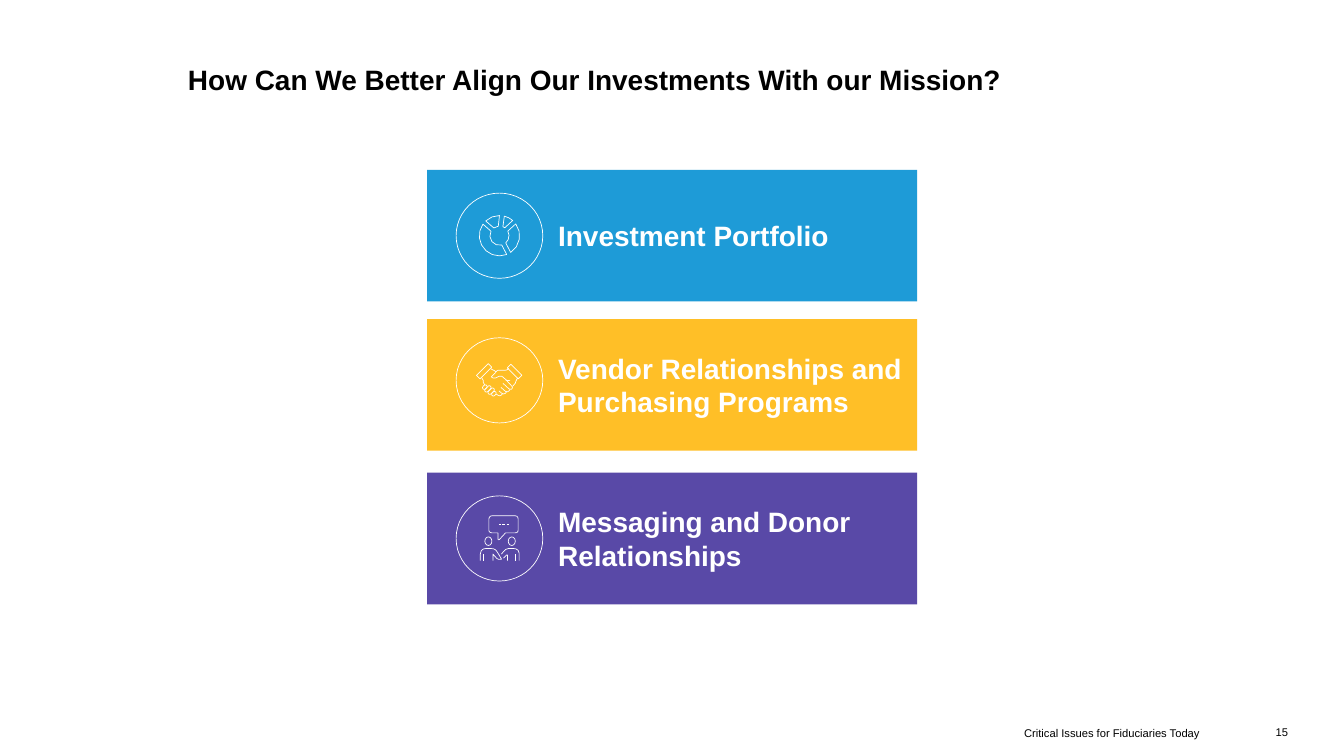
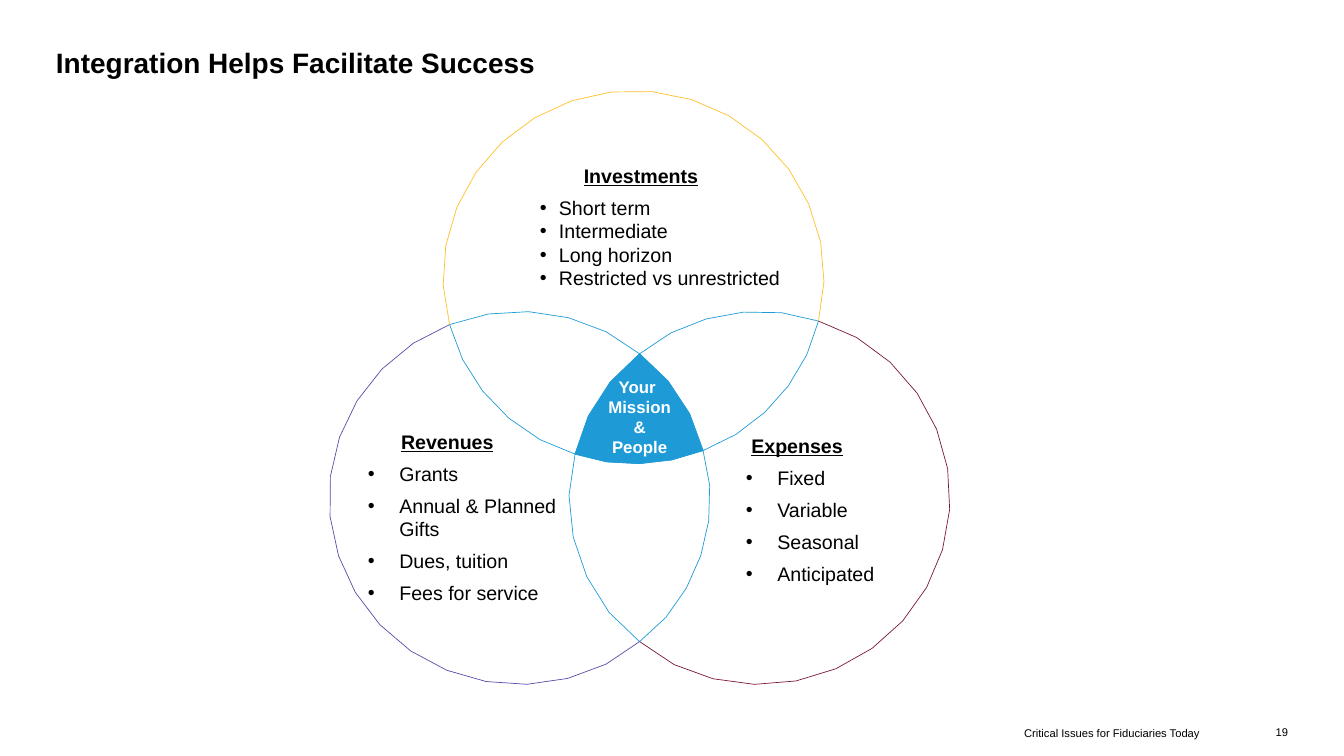
from math import atan2, ceil, cos, pi, radians, sin

from lxml import etree
from pptx import Presentation
from pptx.dml.color import RGBColor
from pptx.enum.shapes import MSO_CONNECTOR, MSO_SHAPE
from pptx.enum.text import MSO_ANCHOR, PP_ALIGN
from pptx.oxml.ns import qn
from pptx.util import Inches, Pt

RECT, OVAL, PILL = MSO_SHAPE.RECTANGLE, MSO_SHAPE.OVAL, MSO_SHAPE.ROUNDED_RECTANGLE
STRAIGHT = MSO_CONNECTOR.STRAIGHT
LEFT, CENTER, RIGHT = PP_ALIGN.LEFT, PP_ALIGN.CENTER, PP_ALIGN.RIGHT
TOP, MIDDLE = MSO_ANCHOR.TOP, MSO_ANCHOR.MIDDLE

FONT = "Arial"
BLACK, WHITE, BLUE, GOLD, PURPLE, WINE = (
    "000000", "FFFFFF", "1E9BD7", "FFBF27", "5949A7", "7A1736")
COLUMNS, ROWS = 80, 45
ICON_UNIT = 0.03  # icon drawings count in these parts of a grid cell
FOOTER = "Critical Issues for Fiduciaries Today"


def rgb(value):
    return RGBColor.from_string(value)


def curve_points(steps, count=3):
    """Turn line steps (x, y) and Bezier steps (six numbers) into points."""
    points = []
    for step in steps:
        if len(step) == 2:
            points.append(step)
            continue
        corners = [points[-1], step[:2], step[2:4], step[4:]]
        for i in range(1, count + 1):
            t = i / count
            weights = ((1 - t) ** 3, 3 * t * (1 - t) ** 2, 3 * t * t * (1 - t), t ** 3)
            points.append(tuple(sum(w * c[axis] for w, c in zip(weights, corners))
                                for axis in (0, 1)))
    return points


def spread(first, last, widest):
    """Equal steps from first to last, none wider than the given one."""
    count = max(1, ceil(abs(last - first) / widest))
    return [first + (last - first) * i / count for i in range(count + 1)]


def polar(radius, degrees):
    """Point at a clockwise angle from twelve o'clock."""
    return radius * sin(radians(degrees)), -radius * cos(radians(degrees))


class Deck:
    """Presentation style, grid and current slide."""

    def __init__(self):
        self.deck = Presentation()
        self.deck.slide_width, self.deck.slide_height = Inches(26.66), Inches(15)
        self.slide = self.shapes = None

    def x(self, columns):
        return round(self.deck.slide_width * columns / COLUMNS)

    def y(self, rows):
        return round(self.deck.slide_height * rows / ROWS)

    def box(self, left, top, width, height):
        return self.x(left), self.y(top), self.x(width), self.y(height)

    def new_slide(self, title, title_box, number):
        self.slide = self.deck.slides.add_slide(self.deck.slide_layouts[5])
        self.shapes = self.slide.shapes
        heading = self.shapes.title
        heading.left, heading.top, heading.width, heading.height = self.box(*title_box)
        self.frame(heading, TOP)
        self.paragraph(heading, title, size=40, bold=True)
        self.text((53.05, 43.2, 18.36, 0.9), [FOOTER], MIDDLE, size=16, align=RIGHT)
        self.text((74.3, 43.14, 2.37, 0.9), [number], MIDDLE, size=16, align=RIGHT)

    def frame(self, shape, anchor, insets=(0, 0, 0, 0)):
        frame = shape.text_frame
        frame.word_wrap, frame.vertical_anchor = True, anchor
        (frame.margin_left, frame.margin_top,
         frame.margin_right, frame.margin_bottom) = self.box(*insets)

    def paragraph(self, shape, text, size, color=BLACK, align=LEFT, before=0,
                  indent=0, bullet=False, **font):
        frame = shape.text_frame
        paragraph = frame.add_paragraph() if frame.text else frame.paragraphs[0]
        properties = paragraph._p.get_or_add_pPr()
        if indent:
            properties.set("marL", str(self.x(indent)))
            properties.set("indent", str(-self.x(indent) if bullet else 0))
        if bullet:
            etree.SubElement(properties, qn("a:buFont")).set("typeface", FONT)
            etree.SubElement(properties, qn("a:buChar")).set("char", "•")
        paragraph.alignment, paragraph.space_before = align, Pt(before)
        run = paragraph.add_run()
        run.text = text
        for name, value in {"name": FONT, "size": Pt(size), **font}.items():
            setattr(run.font, name, value)
        run.font.color.rgb = rgb(color)

    def text(self, box, lines, anchor=TOP, **style):
        shape = self.shapes.add_textbox(*self.box(*box))
        self.frame(shape, anchor)
        for line in lines:
            self.paragraph(shape, line, **style)
        return shape

    def paint(self, shape, fill=None, line=None):
        shape.shadow.inherit = False
        if fill:
            shape.fill.solid()
            shape.fill.fore_color.rgb = rgb(fill)
        else:
            shape.fill.background()
        if line:
            shape.line.color.rgb, shape.line.width = rgb(line), Pt(1)
        else:
            shape.line.fill.background()
        return shape

    def preset(self, kind, box, fill=None, line=None, rotation=0):
        shape = self.paint(self.shapes.add_shape(kind, *self.box(*box)), fill, line)
        shape.rotation = rotation
        if kind == PILL:
            shape.adjustments[0] = 0.5
        return shape

    def outline(self, points, line, fill=None, close=False):
        places = [(self.x(x), self.y(y)) for x, y in points]
        builder = self.shapes.build_freeform(*places[0])
        builder.add_line_segments(places[1:], close=close)
        return self.paint(builder.convert_to_shape(), fill, line)

    def straight(self, start, end, line):
        connector = self.shapes.add_connector(
            STRAIGHT, self.x(start[0]), self.y(start[1]), self.x(end[0]), self.y(end[1]))
        connector.line.color.rgb, connector.line.width = rgb(line), Pt(1)
        etree.SubElement(connector._element.spPr, qn("a:effectLst"))

    def icon(self, center, drawing):
        """Ringed line icon; the drawing is given around its centre."""
        def place(point):
            return tuple(c + p * ICON_UNIT for c, p in zip(center, point))

        self.shapes = self.slide.shapes.add_group_shape().shapes
        ring = (OVAL, 0, 0, 172, 169, 0)
        for kind, x, y, width, height, rotation in [ring] + drawing.get("presets", []):
            left, top = place((x - width / 2, y - height / 2))
            self.preset(kind, (left, top, width * ICON_UNIT, height * ICON_UNIT),
                        line=WHITE, rotation=rotation)
        for key, close in (("open", False), ("closed", True)):
            for steps in drawing.get(key, []):
                self.outline([place(p) for p in curve_points(steps)], WHITE, close=close)
        for x1, y1, x2, y2 in drawing.get("lines", []):
            self.straight(place((x1, y1)), place((x2, y2)), WHITE)
        self.shapes = self.slide.shapes

    def bullet_list(self, box, heading, heading_indent, items, indent, gaps):
        listing = self.text(box, [heading], size=28, bold=True, underline=True,
                            indent=heading_indent)
        for item, gap in zip(items, gaps):
            self.paragraph(listing, item, 28, before=gap, indent=indent, bullet=True)


def ring_segment(start, end, outer=40, inner=19, inset=7):
    return ([polar(outer, a) for a in spread(start, end, 24)]
            + [polar(inner, a) for a in spread(end - inset, start + inset, 36)])


PORTFOLIO = {"closed": [ring_segment(*span) for span in
                        ((14, 41), (54, 146), (159, 305), (317, 360))]}
HANDSHAKE = {
    "presets": [(RECT, -30.5, -18, 33, 10, 315), (RECT, 30, -17.5, 10, 31, 315)]
    + [(PILL, x, y, length, 7, 315) for x, y, length in
       ((-29, 13.5, 10), (-23, 17, 15), (-16.5, 21.5, 15), (-11, 26.5, 10))],
    "open": [
        [(12, -2), (5, -8), (-1, -8), (-3, -7, -5, -6, -7, -5),
         (-10, -4, -14, -4, -16, -7), (-10, -13), (-5, -19),
         (-4, -20, -3, -20, -1, -20), (9, -20), (11, -20, 15, -20, 17, -22), (18, -24)],
        [(26, 12), (35, 4, 31, 2, 35, -3), (37, -5)],
        [(12, -2), (25, 12), (28, 14, 24, 21, 19, 17), (7, 6)],
        [(21, 18), (20, 20, 17, 25, 12, 22), (3, 14)],
        [(14, 23), (12, 27, 8, 28, 5, 26), (-1, 21)],
        [(6, 27), (4, 30, 1, 32, -2, 30), (-7, 27)],
        [(-17, -23), (-12, -19, -11, -21, -7, -17)],
        [(-29, 9), (-35, 4, -29, 1, -35, -5)],
        [(21, 0), (16, 1, 15, 0, 12, -1)]]}
DIALOGUE = {
    "presets": [(OVAL, x, 5.5, 14, 17, 0) for x in (24.5, -22)],
    "open": [
        [(4, 31), (8, 26, 12, 20, 18, 20), (28, 20), (32, 20, 39, 22, 39, 29), (39, 44)],
        [(16, 44), (16, 33), (14, 33), (8, 39)],
        [(-13, 44), (-13, 31), (-5, 40), (-2, 43, 4, 41, 4, 41),
         (4, 41, -1, 32, -5, 26), (-7, 22, -11, 20, -17, 20), (-27, 20),
         (-31, 20, -38, 22, -38, 31), (-38, 44)]],
    "closed": [
        [(31, -45), (-15, -45), (-18, -45, -21, -42, -21, -39), (-21, -16),
         (-21, -13, -18, -11, -15, -11), (-3, -11), (-3, 1), (-3, 3, -1, 3, 0, 2),
         (12, -11), (31, -11), (35, -11, 37, -13, 37, -16), (37, -39),
         (37, -42, 35, -45, 31, -45)]],
    "lines": [(x, 31, x, 44) for x in (31, -31)]
    + [(x, -28, x + 4, -28) for x in (-1, 6, 14)]}

CARDS = [
    ("Investment Portfolio", BLUE, 10.11, 14.03, PORTFOLIO),
    ("Vendor Relationships and Purchasing Programs", GOLD, 18.99, 22.64, HANDSHAKE),
    ("Messaging and Donor Relationships", PURPLE, 28.14, 32.05, DIALOGUE)]

RADIUS_X, RADIUS_Y = 11.34, 11.1
CIRCLES = {"investments": (37.71, 16.5), "revenues": (30.93, 29.64),
           "expenses": (45.21, 29.64)}
CROSSINGS = {"west": (26.76, 19.32), "east": (48.72, 19.11), "south": (38.07, 38.19),
             "core top": (38.07, 21.06), "core left": (34.23, 27.03),
             "core right": (41.85, 26.82)}
# Each region runs clockwise: crossing, then the circle followed to the next one.
EAST_LENS = (("east", "investments"), ("core right", "revenues"), ("core top", "expenses"))
SOUTH_LENS = (("south", "expenses"), ("core left", "investments"),
              ("core right", "revenues"))
WEST_LENS = (("west", "revenues"), ("core top", "expenses"), ("core left", "investments"))
CORE = (("core top", "revenues"), ("core right", "investments"), ("core left", "expenses"))


def circle_arc(circle, start, end, major=False):
    """Points from one crossing to another, the long way clockwise if major."""
    center_x, center_y = CIRCLES[circle]
    first, last = (atan2((y - center_y) / RADIUS_Y, (x - center_x) / RADIUS_X)
                   for x, y in (CROSSINGS[start], CROSSINGS[end]))
    sweep = (last - first) % (2 * pi)
    if not major and sweep > pi:
        sweep -= 2 * pi
    middle = [(center_x + RADIUS_X * cos(a), center_y + RADIUS_Y * sin(a))
              for a in spread(first, first + sweep, radians(13))[1:-1]]
    return [CROSSINGS[start], *middle, CROSSINGS[end]]


def region(edges):
    points = []
    for (start, circle), (end, _) in zip(edges, edges[1:] + edges[:1]):
        points += circle_arc(circle, start, end)[:-1]
    return points


def alignment_slide(deck):
    deck.new_slide("How Can We Better Align Our Investments With our Mission?",
                   (11.19, 3.72, 59.58, 2.01), "15")
    for label, color, top, icon_row, drawing in CARDS:
        card = deck.preset(RECT, (25.42, top, 29.17, 7.83), fill=color)
        deck.frame(card, MIDDLE, (7.8, 0.48, 0.3, 0.48))
        deck.paragraph(card, label, 40, WHITE, bold=True)
        deck.icon((29.73, icon_row), drawing)


def integration_slide(deck):
    deck.new_slide("Integration Helps Facilitate Success", (3.33, 2.7, 73.32, 2.01), "19")
    deck.shapes = deck.slide.shapes.add_group_shape().shapes
    for lens in (EAST_LENS, SOUTH_LENS, WEST_LENS):
        deck.outline(region(lens), BLUE, close=True)
    for circle, start, end, color in (("expenses", "east", "south", WINE),
                                      ("revenues", "south", "west", PURPLE),
                                      ("investments", "west", "east", GOLD)):
        deck.outline(circle_arc(circle, start, end, major=True), color)
    deck.outline(region(CORE), BLUE, fill=BLUE, close=True)
    deck.shapes = deck.slide.shapes

    deck.bullet_list((32.13, 9.75, 15.18, 8.67), "Investments", 2.62,
                     ["Short term", "Intermediate", "Long horizon",
                      "Restricted vs unrestricted"], 1.14, (12, 0, 0, 0))
    deck.text((31.08, 22.41, 13.98, 8.31), ["Your ", "Mission", "&", "People"],
              size=24, color=WHITE, align=CENTER, bold=True)
    deck.bullet_list((21.9, 25.59, 12.27, 11.37), "Revenues", 1.97,
                     ["Grants", "Annual & Planned Gifts", "Dues, tuition",
                      "Fees for service"], 1.87, [12] * 4)
    deck.bullet_list((44.4, 25.83, 13.98, 9.75), "Expenses", 0.32,
                     ["Fixed", "Variable", "Seasonal", "Anticipated"], 1.87, [12] * 4)


def main():
    deck = Deck()
    alignment_slide(deck)
    integration_slide(deck)
    deck.deck.save("out.pptx")


if __name__ == "__main__":
    main()
